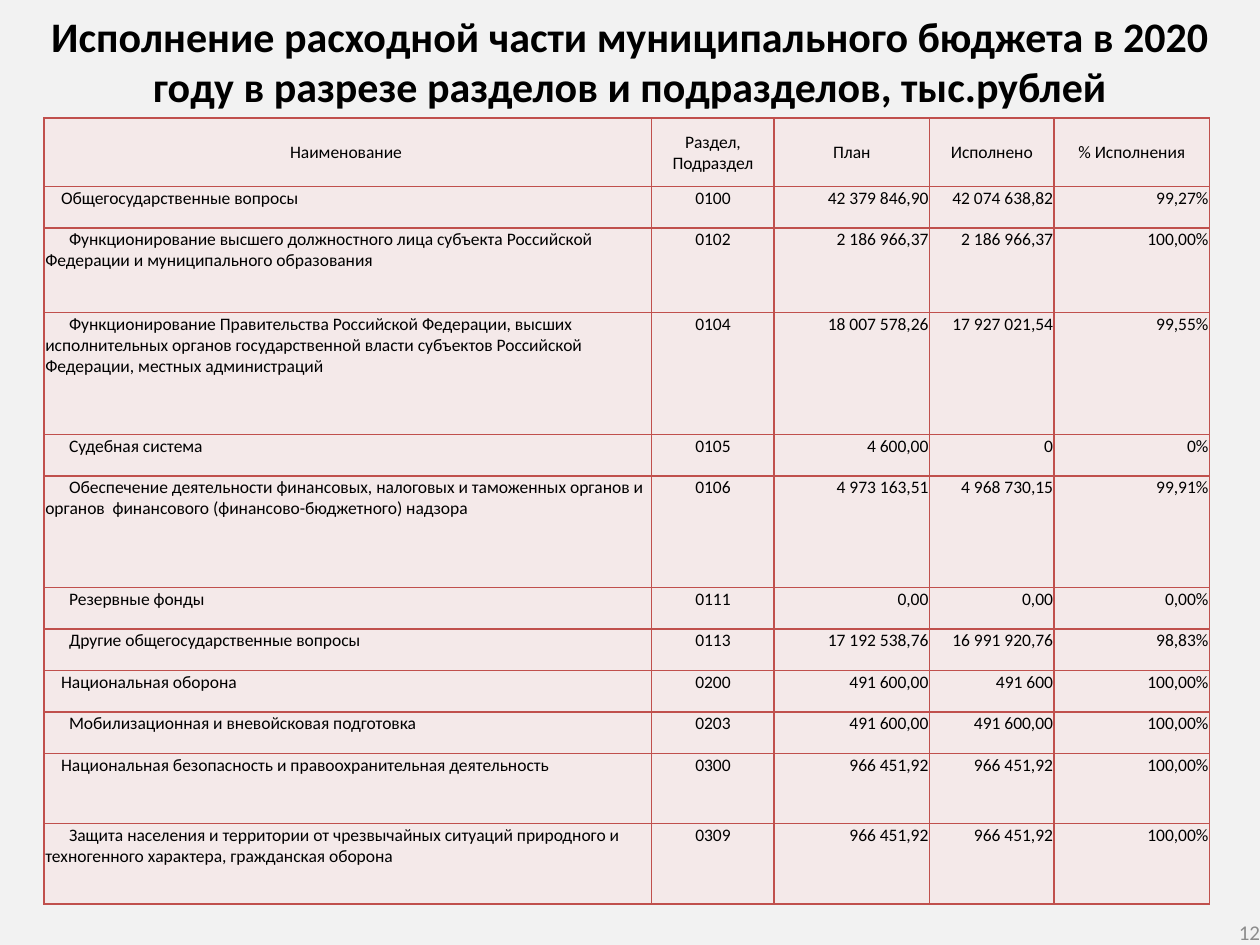
import pptx
import pptx.dml.color
import pptx.enum.text
import pptx.oxml
import pptx.util
from lxml import etree

Pt = pptx.util.Pt
RGBColor = pptx.dml.color.RGBColor
Align = pptx.enum.text.PP_ALIGN
Anchor = pptx.enum.text.MSO_ANCHOR

BACKGROUND = RGBColor(0xF2, 0xF2, 0xF2)
BLACK = RGBColor(0, 0, 0)
GREY = RGBColor(0x8C, 0x8C, 0x8C)
CELL_FILL = RGBColor(0xF4, 0xE9, 0xE9)
BORDER = RGBColor(0xC0, 0x50, 0x4D)

FONT = "Calibri"
SECTION_INDENT = 9
SUBSECTION_INDENT = 13.6
COLUMN_WIDTHS = [347.2, 70, 88.8, 71.2, 88.8]
ROW_HEIGHTS = [39, 23.7, 48.3, 69.8, 23.7, 63.8, 23.7, 23.7, 23.7, 23.7, 40, 46]
COLUMN_ALIGNMENTS = [Align.LEFT, Align.CENTER, Align.RIGHT, Align.RIGHT, Align.RIGHT]

TITLE = ("Исполнение расходной части муниципального бюджета в 2020 году "
         "в разрезе разделов и подразделов, тыс.рублей")
HEADER = ["Наименование ", "Раздел, Подраздел", "План", "Исполнено", "% Исполнения"]
BUDGET_ROWS = [
    ["Общегосударственные вопросы", "0100", "42 379 846,90", "42 074 638,82", "99,27%"],
    ["Функционирование высшего должностного лица субъекта Российской Федерации "
     "и муниципального образования",
     "0102", "2 186 966,37", "2 186 966,37", "100,00%"],
    ["Функционирование Правительства Российской Федерации, высших исполнительных "
     "органов государственной власти субъектов Российской Федерации, "
     "местных администраций",
     "0104", "18 007 578,26", "17 927 021,54", "99,55%"],
    ["Судебная система", "0105", "4 600,00", "0", "0%"],
    ["Обеспечение деятельности финансовых, налоговых и таможенных органов "
     "и органов  финансового (финансово-бюджетного) надзора",
     "0106", "4 973 163,51", "4 968 730,15", "99,91%"],
    ["Резервные фонды", "0111", "0,00", "0,00", "0,00%"],
    ["Другие общегосударственные вопросы",
     "0113", "17 192 538,76", "16 991 920,76", "98,83%"],
    ["Национальная оборона", "0200", "491 600,00", "491 600", "100,00%"],
    ["Мобилизационная и вневойсковая подготовка",
     "0203", "491 600,00", "491 600,00", "100,00%"],
    ["Национальная безопасность и правоохранительная деятельность",
     "0300", "966 451,92", "966 451,92", "100,00%"],
    ["Защита населения и территории от чрезвычайных ситуаций природного "
     "и техногенного характера, гражданская оборона",
     "0309", "966 451,92", "966 451,92", "100,00%"],
]


def write_text(text_frame, text, size=10, color=BLACK, bold=False,
               alignment=Align.LEFT, indent=0):
    text_frame.word_wrap = True
    paragraph = text_frame.paragraphs[0]
    paragraph.alignment = alignment
    if indent:
        properties = paragraph._p.get_or_add_pPr()
        properties.set("marL", "0")
        properties.set("indent", str(Pt(indent)))
    run = paragraph.add_run()
    run.text = text
    run.font.name = FONT
    run.font.size = Pt(size)
    run.font.bold = bold
    run.font.color.rgb = color


def set_margins(container, left, top, right, bottom):
    container.margin_left = Pt(left)
    container.margin_top = Pt(top)
    container.margin_right = Pt(right)
    container.margin_bottom = Pt(bottom)


def add_text_box(slide, text, left, top, width, height, margins, anchor, **text_format):
    shape = slide.shapes.add_textbox(Pt(left), Pt(top), Pt(width), Pt(height))
    set_margins(shape.text_frame, *margins)
    shape.text_frame.vertical_anchor = anchor
    write_text(shape.text_frame, text, **text_format)


def add_borders(cell):
    properties = cell._tc.get_or_add_tcPr()
    for side in ("lnL", "lnR", "lnT", "lnB"):
        line = etree.SubElement(properties, pptx.oxml.ns.qn(f"a:{side}"), w=str(Pt(1)))
        fill = etree.SubElement(line, pptx.oxml.ns.qn("a:solidFill"))
        etree.SubElement(fill, pptx.oxml.ns.qn("a:srgbClr"), val=str(BORDER))


def fill_cell(cell, text, anchor, **text_format):
    add_borders(cell)
    cell.fill.solid()
    cell.fill.fore_color.rgb = CELL_FILL
    set_margins(cell, 0.7, 0.7, 0.7, 0)
    cell.vertical_anchor = anchor
    write_text(cell.text_frame, text, **text_format)


def add_budget_table(slide, left, top):
    table = slide.shapes.add_table(
        len(ROW_HEIGHTS), len(COLUMN_WIDTHS), Pt(left), Pt(top),
        Pt(sum(COLUMN_WIDTHS)), Pt(sum(ROW_HEIGHTS))).table
    table.first_row = False
    table.horz_banding = False
    for column, width in zip(table.columns, COLUMN_WIDTHS):
        column.width = Pt(width)
    for row, height in zip(table.rows, ROW_HEIGHTS):
        row.height = Pt(height)
    for column_index, text in enumerate(HEADER):
        fill_cell(table.cell(0, column_index), text, Anchor.MIDDLE,
                  alignment=Align.CENTER)
    for row_index, values in enumerate(BUDGET_ROWS, start=1):
        is_section = values[1].endswith("00")
        name_indent = SECTION_INDENT if is_section else SUBSECTION_INDENT
        for column_index, text in enumerate(values):
            fill_cell(table.cell(row_index, column_index), text, Anchor.TOP,
                      alignment=COLUMN_ALIGNMENTS[column_index],
                      indent=name_indent if column_index == 0 else 0)


def main():
    presentation = pptx.Presentation()
    presentation.slide_width = Pt(720)
    presentation.slide_height = Pt(540)
    slide = presentation.slides.add_slide(presentation.slide_layouts[6])
    slide.background.fill.solid()
    slide.background.fill.fore_color.rgb = BACKGROUND

    add_text_box(slide, TITLE, 0, 0, 720, 67.7, (7.2, 5.8, 7.2, 3.6), Anchor.TOP,
                 size=24, bold=True, alignment=Align.CENTER)
    add_text_box(slide, "12", 552, 525, 168, 15, (0, 0, 0, 0), Anchor.MIDDLE,
                 size=12, color=GREY, alignment=Align.RIGHT)
    add_budget_table(slide, 25.2, 67.5)
    presentation.save("out.pptx")


if __name__ == "__main__":
    main()
